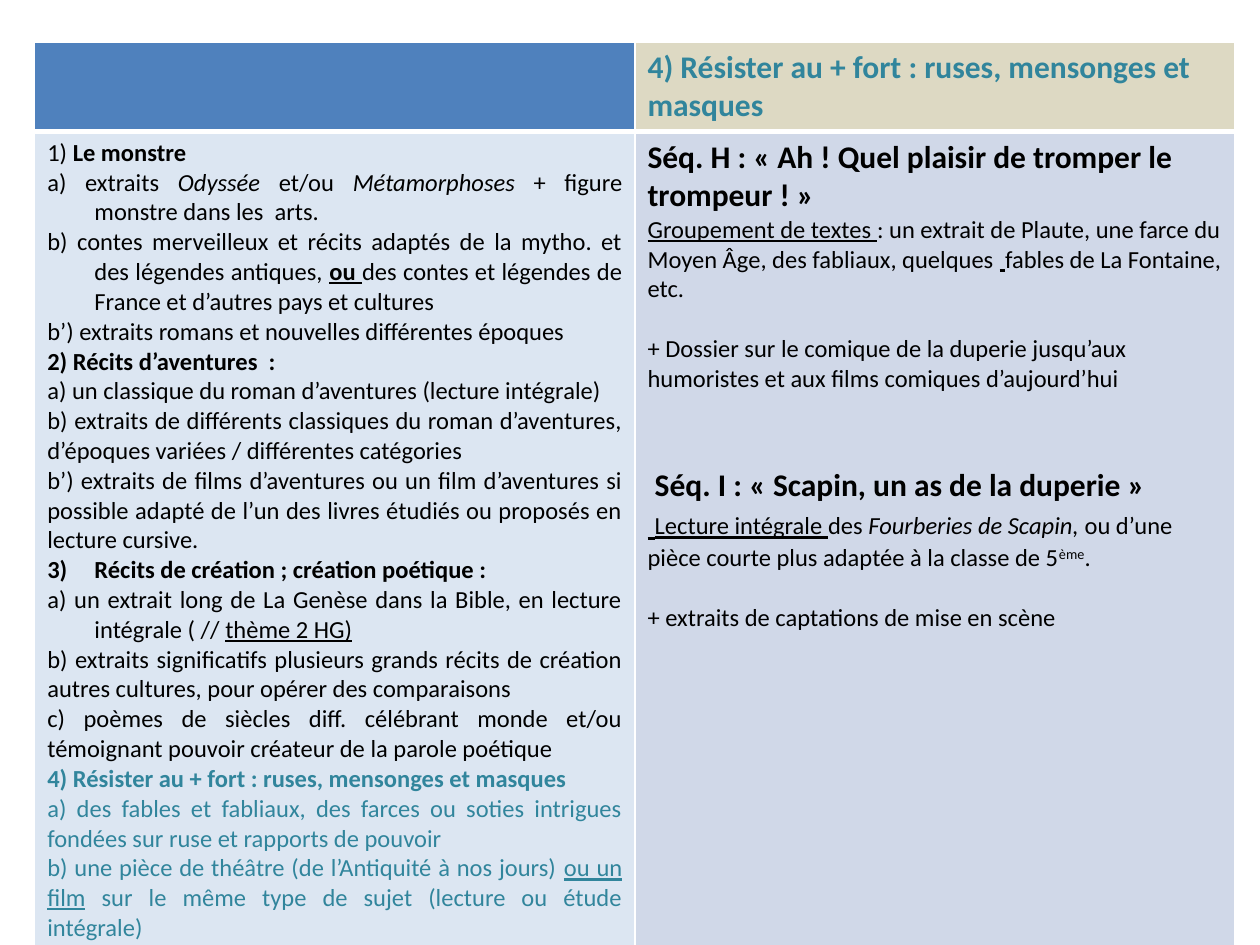
import pptx
import pptx.util
import pptx.dml.color
import pptx.enum.text
import pptx.oxml
import pptx.oxml.ns
from dataclasses import dataclass
from pptx.util import Cm, Pt


@dataclass(frozen=True)
class Theme:
    font: str = "Calibri"
    heading: int = 18
    body: int = 14
    black: str = "000000"
    accent: str = "31859C"
    line: str = "FFFFFF"
    blue: str = "4F81BD"
    sand: str = "DDD9C3"
    pale_blue: str = "DCE6F2"
    pale_violet: str = "D0D8E8"


THEME = Theme()
HANGING = Cm(0.95)
BLANK_LINE = 17


@dataclass(frozen=True)
class Line:
    """One paragraph; runs are (text, style), style letters: b, i, u, s (superscript), h (heading size)."""
    runs: tuple
    size: int = THEME.body
    color: str = THEME.black
    hanging: bool = False
    number: int = 0
    before: float = 0


def line(*runs, **options):
    return Line(tuple((run, "") if isinstance(run, str) else run for run in runs), **options)


HEADER = [line(("4) Résister au + fort : ruses, mensonges et masques", "b"),
               size=THEME.heading, color=THEME.accent)]

PROGRAMME = [
    line("1) ", ("Le monstre ", "b"), hanging=True),
    line("a) extraits ", ("Odyssée", "i"), " et/ou ", ("Métamorphoses ", "i"),
         "+ figure monstre dans les  arts.", hanging=True),
    line("b) contes merveilleux et récits adaptés de la mytho. et des légendes antiques, ",
         ("ou ", "bu"), "des contes et légendes de France et d’autres pays et cultures", hanging=True),
    line("b’) extraits romans et nouvelles différentes époques"),
    line(("2) Récits d’aventures  :", "b")),
    line("a) un classique du roman d’aventures (lecture intégrale)"),
    line("b) extraits de différents classiques du roman d’aventures, d’époques variées / "
         "différentes catégories"),
    line("b’) extraits de films d’aventures ou un film d’aventures si possible adapté de l’un "
         "des livres étudiés ou proposés en lecture cursive."),
    line(("Récits de création ; création poétique :", "b"), hanging=True, number=3),
    line("a) un extrait long de La Genèse dans la Bible, en lecture intégrale ( // ",
         ("thème 2 HG)", "u"), hanging=True),
    line("b) extraits significatifs plusieurs grands récits de création autres cultures, "
         "pour opérer des comparaisons"),
    line("c) poèmes de siècles diff. célébrant monde et/ou témoignant pouvoir créateur "
         "de la parole poétique"),
    line(("4) Résister au + fort : ruses, mensonges et masques", "b"), color=THEME.accent),
    line("a) des fables et fabliaux, des farces ou soties intrigues fondées sur ruse et "
         "rapports de pouvoir", color=THEME.accent),
    line("b) une pièce de théâtre (de l’Antiquité à nos jours) ", ("ou un film", "u"),
         " sur le même type de sujet (lecture ou étude intégrale)", color=THEME.accent),
]

SEQUENCES = [
    line(("Séq. H : « Ah ! Quel plaisir de tromper le trompeur ! »", "b"), size=THEME.heading),
    line(("Groupement de textes ", "u"),
         ": un extrait de Plaute, une farce du Moyen Âge, des fabliaux, quelques ",
         (" ", "u"), "fables de La Fontaine, etc."),
    line("+ Dossier sur le comique de la duperie jusqu’aux humoristes et aux films comiques "
         "d’aujourd’hui", before=BLANK_LINE),
    line(" ", ("Séq. I : « Scapin, un as de la duperie »", "b"),
         size=THEME.heading, before=41.5),
    line((" ", "buh"), ("Lecture intégrale ", "u"), "des ", ("Fourberies de Scapin, ", "i"),
         "ou d’une pièce courte plus adaptée à la classe de 5", ("ème", "s"), "."),
    line("+ extraits de captations de mise en scène", before=BLANK_LINE),
]


def write_paragraph(paragraph, content, alignment):
    paragraph.alignment = alignment
    paragraph.space_before = Pt(content.before)
    font = paragraph.font
    font.name, font.size = THEME.font, Pt(content.size)
    font.color.rgb = pptx.dml.color.RGBColor.from_string(content.color)
    properties = paragraph._p.get_or_add_pPr()
    if content.hanging:
        properties.set("marL", str(HANGING))
        properties.set("indent", str(-HANGING))
    if content.number:
        numbering = pptx.oxml.parse_xml(
            f'<a:buAutoNum {pptx.oxml.ns.nsdecls("a")} type="arabicParenR" startAt="{content.number}"/>')
        properties.find(pptx.oxml.ns.qn("a:defRPr")).addprevious(numbering)
    for text, style in content.runs:
        run = paragraph.add_run()
        run.text = text
        run.font.bold = "b" in style
        run.font.italic = "i" in style
        run.font.underline = "u" in style
        if "h" in style:
            run.font.size = Pt(THEME.heading)
        if "s" in style:
            run.font._element.set("baseline", "30000")


def set_borders(cell, **widths):
    properties = cell._tc.get_or_add_tcPr()
    for index, side in enumerate("LRTB"):
        properties.insert(index, pptx.oxml.parse_xml(
            f'<a:ln{side} {pptx.oxml.ns.nsdecls("a")} w="{Pt(widths.get(side, 1))}">'
            f'<a:solidFill><a:srgbClr val="{THEME.line}"/></a:solidFill></a:ln{side}>'))


def fill_cell(cell, color, lines, alignment, **borders):
    set_borders(cell, **borders)
    cell.fill.solid()
    cell.fill.fore_color.rgb = pptx.dml.color.RGBColor.from_string(color)
    frame = cell.text_frame
    for index, content in enumerate(lines):
        paragraph = frame.paragraphs[0] if index == 0 else frame.add_paragraph()
        write_paragraph(paragraph, content, alignment)


def add_programme_table(slide, left, top, width, height):
    table = slide.shapes.add_table(2, 2, left, top, width, height).table
    table.first_row = table.horz_banding = False
    for column in table.columns:
        column.width = width // 2
    table.rows[0].height = Cm(1.75)
    table.rows[1].height = height - Cm(1.75)

    align = pptx.enum.text.PP_ALIGN
    # Header row, above a thick rule
    fill_cell(table.cell(0, 0), THEME.blue, [], align.LEFT, B=3)
    fill_cell(table.cell(0, 1), THEME.sand, HEADER, align.LEFT, B=3)
    # Programme on the left, sequences on the right
    fill_cell(table.cell(1, 0), THEME.pale_blue, PROGRAMME, align.JUSTIFY, T=3)
    fill_cell(table.cell(1, 1), THEME.pale_violet, SEQUENCES, align.LEFT, T=3)


def main():
    presentation = pptx.Presentation()
    presentation.slide_width, presentation.slide_height = Cm(25.4), Cm(19.05)
    slide = presentation.slides.add_slide(presentation.slide_layouts[6])
    add_programme_table(slide, Cm(0.7), Cm(0.85), Cm(24.2), Cm(18.03))
    presentation.save("out.pptx")


if __name__ == "__main__":
    main()
